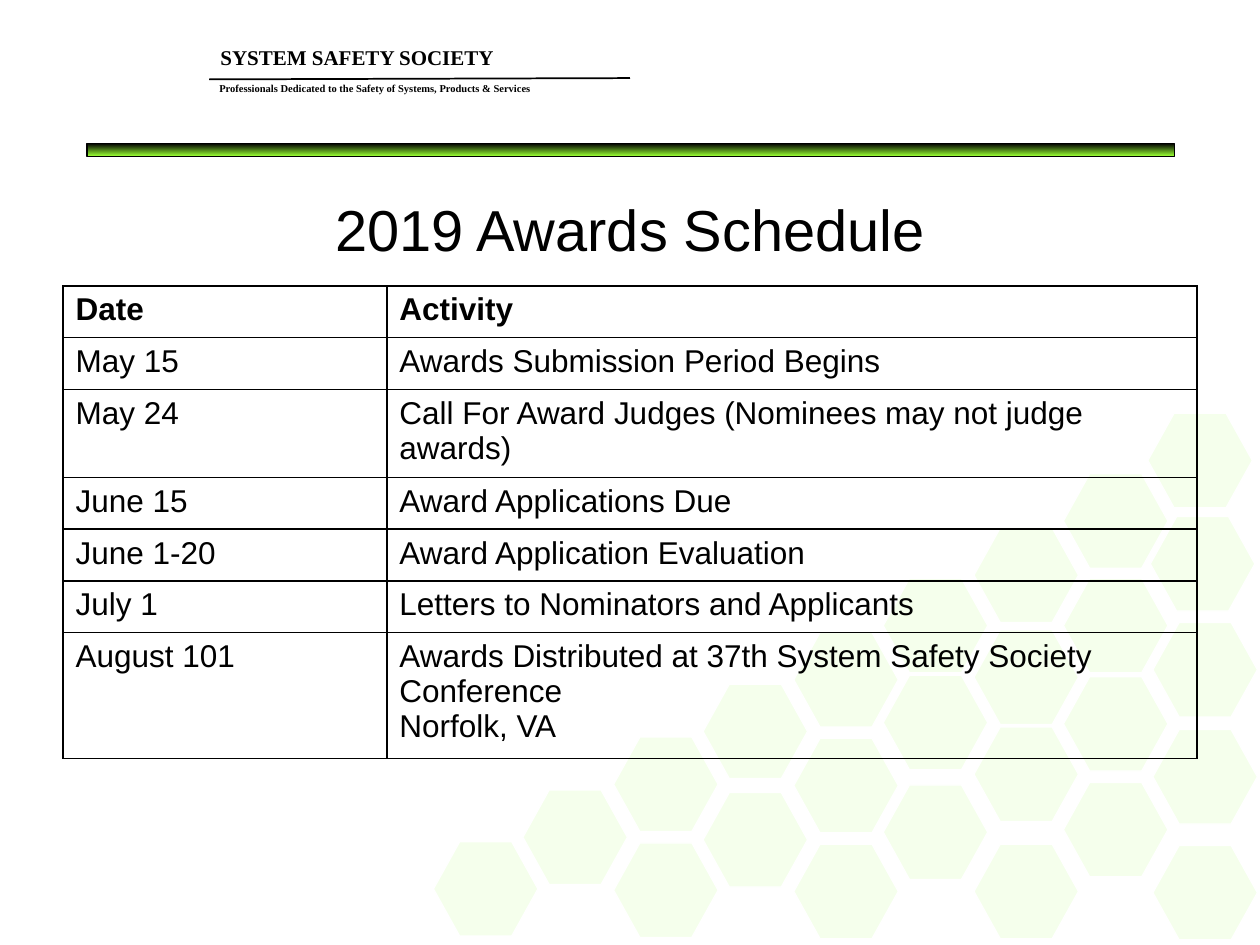
"""Build the awards schedule slide with its society header and hexagon backdrop."""
import pptx
import pptx.dml.color
import pptx.enum.shapes
import pptx.enum.text
import pptx.oxml
import pptx.oxml.ns
import pptx.util
from pptx.util import Inches

BLACK = pptx.dml.color.RGBColor(0x00, 0x00, 0x00)
WHITE = pptx.dml.color.RGBColor(0xFF, 0xFF, 0xFF)
GREEN = pptx.dml.color.RGBColor(0x99, 0xFF, 0x33)
NAMESPACE = pptx.oxml.ns.nsdecls("a")


def write_text(text_frame, text, size, font="Arial", bold=False, align=pptx.enum.text.PP_ALIGN.LEFT):
    text_frame.text = text
    text_frame.word_wrap = True
    for paragraph in text_frame.paragraphs:
        paragraph.alignment = align
        paragraph.font.size = pptx.util.Pt(size)
        paragraph.font.name = font
        paragraph.font.bold = bold
        paragraph.font.color.rgb = BLACK


presentation = pptx.Presentation()
presentation.slide_width = Inches(10)
presentation.slide_height = Inches(7.5)
slide = presentation.slides.add_slide(presentation.slide_layouts[5])
shapes = slide.shapes

bar = shapes.add_shape(pptx.enum.shapes.MSO_SHAPE.RECTANGLE, Inches(0.69), Inches(1.14), Inches(8.63), Inches(0.1))
bar.shadow.inherit = False
bar.fill.gradient()
bar.fill.gradient_angle = 270
for stop, color in zip(bar.fill.gradient_stops, (BLACK, GREEN)):
    stop.color.rgb = color
for stop, position in zip(bar.fill.gradient_stops, (0, 1)):
    stop.position = position
bar.line.color.rgb = BLACK
bar.line.width = pptx.util.Pt(0.75)

header_line = shapes.add_connector(
    pptx.enum.shapes.MSO_CONNECTOR.STRAIGHT, Inches(1.66), Inches(0.63), Inches(5), Inches(0.62))
header_line.line.color.rgb = BLACK
header_line.line.width = pptx.util.Pt(1)
header_line._element.spPr.append(pptx.oxml.parse_xml(f"<a:effectLst {NAMESPACE}/>"))

headers = [
    ("SYSTEM SAFETY SOCIETY", 12, 1.68, 0.31, 3.8, 0.28),
    ("Professionals Dedicated to the Safety of Systems, Products & Services", 6, 1.67, 0.61, 3.91, 0.17),
]
for text, size, left, top, width, height in headers:
    text_box = shapes.add_textbox(Inches(left), Inches(top), Inches(width), Inches(height))
    text_frame = text_box.text_frame
    text_frame.margin_left = text_frame.margin_right = Inches(0.07)
    text_frame.margin_top = text_frame.margin_bottom = Inches(0.04)
    write_text(text_frame, text, size, font="Times New Roman", bold=True)

hexagon_columns = {
    3.44: [6.68],
    4.15: [6.27],
    4.87: [5.85, 6.69],
    5.58: [5.43, 6.29],
    6.3: [5.02, 5.86, 6.7],
    7.01: [4.59, 5.36, 6.23],
    7.73: [4.19, 5, 5.77, 6.7],
    8.44: [3.76, 4.59, 5.37, 6.21],
    9.11: [3.28],
    9.13: [4.1],
    9.15: [4.94, 5.79, 6.71],
}
for left, tops in hexagon_columns.items():
    for top in tops:
        hexagon = shapes.add_shape(
            pptx.enum.shapes.MSO_SHAPE.HEXAGON, Inches(left), Inches(top), Inches(0.83), Inches(0.75))
        hexagon.adjustments[0] = 0.278
        hexagon.shadow.inherit = False
        hexagon.fill.solid()
        hexagon.fill.fore_color.rgb = GREEN
        fill_color = hexagon._element.spPr.find(pptx.oxml.ns.qn("a:solidFill"))[0]
        fill_color.append(pptx.oxml.parse_xml(f'<a:alpha {NAMESPACE} val="9000"/>'))
        hexagon.line.color.rgb = WHITE
        hexagon.line.width = pptx.util.Pt(0.75)

title = shapes.title
title.left, title.top, title.width, title.height = Inches(0.5), Inches(1.49), Inches(9), Inches(0.65)
title.text_frame.vertical_anchor = pptx.enum.text.MSO_ANCHOR.MIDDLE
write_text(title.text_frame, "2019 Awards Schedule", 33, align=pptx.enum.text.PP_ALIGN.CENTER)

schedule = [
    ("Date", "Activity"),
    ("May 15", "Awards Submission Period Begins"),
    ("May 24", "Call For Award Judges (Nominees may not judge awards)"),
    ("June 15", "Award Applications Due"),
    ("June 1-20", "Award Application Evaluation"),
    ("July 1", "Letters to Nominators and Applicants"),
    ("August 101", "Awards Distributed at 37th System Safety Society Conference\nNorfolk, VA"),
]
row_height = Inches(0.41)
table = shapes.add_table(
    len(schedule), 2, Inches(0.5), Inches(2.27), Inches(9), row_height * len(schedule)).table
table.first_row = False
table.horz_banding = False
for column, width in zip(table.columns, (2.57, 6.43)):
    column.width = Inches(width)
for row_index, entries in enumerate(schedule):
    table.rows[row_index].height = row_height
    for column_index, text in enumerate(entries):
        cell = table.cell(row_index, column_index)
        write_text(cell.text_frame, text, 18, bold=row_index == 0)
        cell_properties = cell._tc.get_or_add_tcPr()
        for side in "LRTB":
            cell_properties.append(pptx.oxml.parse_xml(
                f'<a:ln{side} {NAMESPACE} w="12700"><a:solidFill><a:srgbClr val="{BLACK}"/></a:solidFill></a:ln{side}>'))
        cell.fill.background()

presentation.save("out.pptx")
